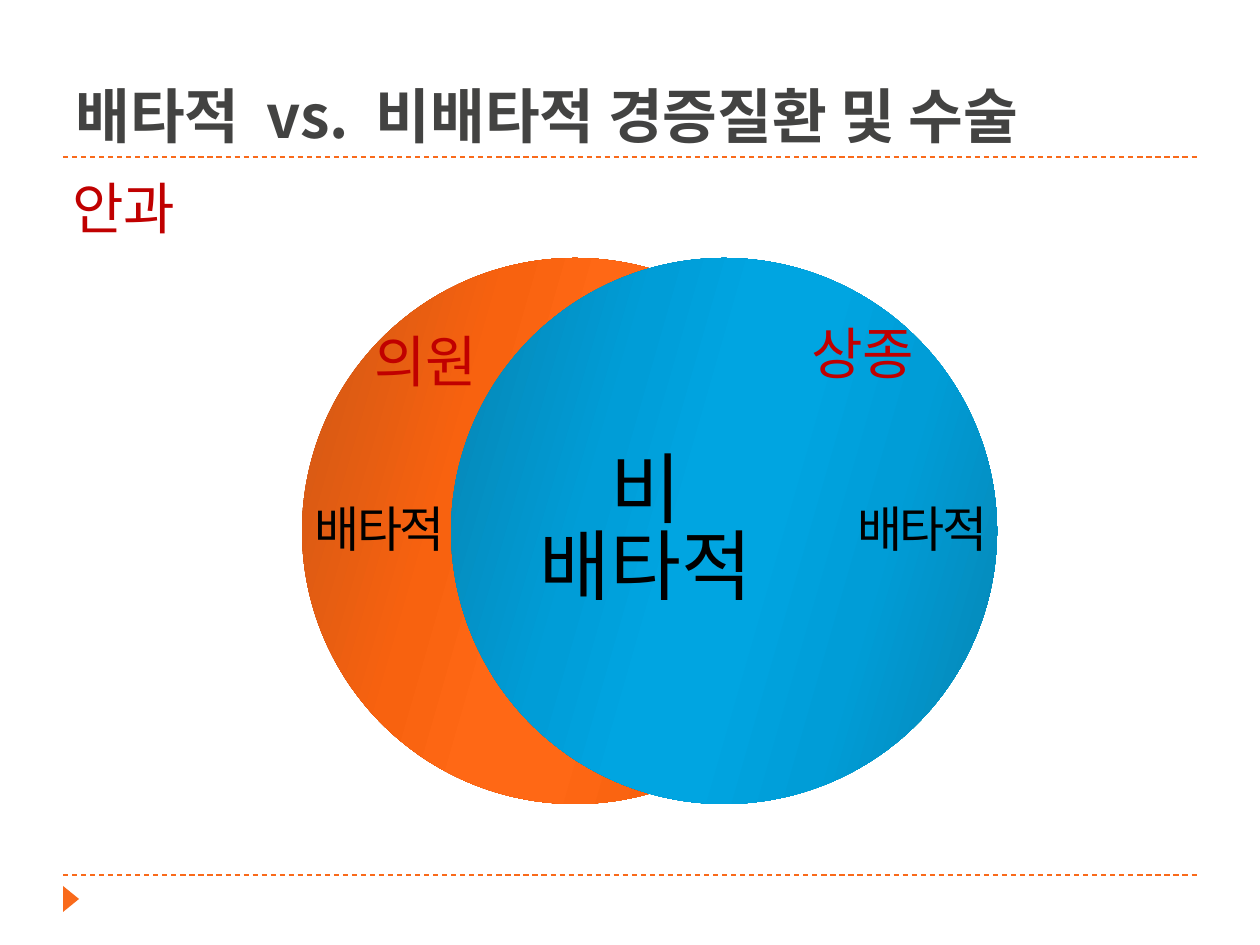
import copy

import pptx
import pptx.dml.color
import pptx.enum.dml
import pptx.enum.shapes
import pptx.enum.text
import pptx.oxml.ns
import pptx.util
from lxml import etree

EMU_PER_PX = 914400 / 126
KOREAN = "Noto Sans CJK KR"
COLORS = {
    "accent": "F96A1B",
    "title": "434342",
    "heading": "C00000",
    "label": "000000",
}
GRADIENT_POSITIONS = [0, 0.30, 0.45, 0.55, 0.73, 1]
ALIGN = pptx.enum.text.PP_ALIGN
ANCHOR = pptx.enum.text.MSO_ANCHOR
SHAPES = pptx.enum.shapes.MSO_SHAPE
rgb = pptx.dml.color.RGBColor.from_string


def emu(*lengths):
    return [pptx.util.Emu(round(px * EMU_PER_PX)) for px in lengths]


def add_text(shapes, box, lines, size, color, font=KOREAN, align=ALIGN.LEFT,
             anchor=ANCHOR.TOP, inset=None, line_spacing=0.84, bold=False,
             tracking=0):
    """Add a text box; each line is a list of (text, extra tracking in pt) runs."""
    textbox = shapes.add_textbox(*emu(*box))
    frame = textbox.text_frame
    frame.word_wrap = True
    frame.vertical_anchor = anchor
    if inset is not None:
        frame.margin_left = frame.margin_right = inset
        frame.margin_top = frame.margin_bottom = inset
    paragraph = frame.paragraphs[0]
    paragraph.alignment = align
    paragraph.line_spacing = line_spacing
    for number, line in enumerate(lines):
        if number:
            paragraph.add_line_break()
        for text, extra in line:
            run = paragraph.add_run()
            run.text = text
            run.font.size = pptx.util.Pt(size)
            run.font.bold = bold
            run.font.name = font
            run.font.color.rgb = rgb(COLORS[color])
            properties = run.font._element
            east_asian = etree.SubElement(properties, pptx.oxml.ns.qn("a:ea"))
            east_asian.set("typeface", font)
            if tracking + extra:
                properties.set("spc", str(round((tracking + extra) * 100)))
    return frame


presentation = pptx.Presentation()
presentation.slide_width, presentation.slide_height = emu(1260, 945)
slide = presentation.slides.add_slide(presentation.slide_layouts[6])

# Dashed rules and footer marker
for rule_y in (157, 875):
    rule = slide.shapes.add_connector(
        pptx.enum.shapes.MSO_CONNECTOR.STRAIGHT, *emu(63, rule_y, 1197, rule_y))
    rule.line.color.rgb = rgb(COLORS["accent"])
    rule.line.width = pptx.util.Pt(0.75)
    rule.line.dash_style = pptx.enum.dml.MSO_LINE.DASH
    etree.SubElement(rule._element.spPr, pptx.oxml.ns.qn("a:effectLst"))

marker = slide.shapes.add_shape(SHAPES.ISOSCELES_TRIANGLE, *emu(58, 891, 26, 16))
marker.rotation = 90
marker.shadow.inherit = False
marker.fill.solid()
marker.fill.fore_color.rgb = rgb(COLORS["accent"])
marker.line.fill.background()

# Title, with wider word gaps around "vs."
add_text(slide.shapes, (63, 21, 1134, 136),
         [[("배타적", 0), (" ", 7.6), ("vs.", 0), (" ", 7.6),
           ("비배타적 경증질환 및 수술", 0)]],
         34, "title", anchor=ANCHOR.BOTTOM, line_spacing=1.2, bold=True)

# Overlapping circles, each grouped with its label
circles = [
    (302, (302, 323, 155, 417), ["CC5716", "F8620F", "FF6815"]),
    (451, (848, 323, 149, 417), ["0784B2", "009DD7", "00A5E1"]),
]
for circle_left, label_box, shades in circles:
    group = slide.shapes.add_group_shape()
    circle = group.shapes.add_shape(SHAPES.OVAL, *emu(circle_left, 258, 546, 546))
    circle.shadow.inherit = False
    circle.line.fill.background()
    circle.fill.gradient()
    circle.fill.gradient_angle = 344
    stop_list = circle._element.spPr.find(".//" + pptx.oxml.ns.qn("a:gsLst"))
    for _ in range(len(GRADIENT_POSITIONS) - len(stop_list)):
        stop_list.append(copy.deepcopy(stop_list[0]))
    mirrored_shades = shades + shades[::-1]
    for stop, position, shade in zip(
            circle.fill.gradient_stops, GRADIENT_POSITIONS, mirrored_shades):
        stop.position = position
        stop.color.rgb = rgb(shade)
    add_text(group.shapes, label_box, [[("배타적", 0)]], 28, "label",
             font="Calibri", align=ALIGN.CENTER, anchor=ANCHOR.MIDDLE,
             inset=0, line_spacing=0.9, tracking=-1.5)

# Department, shared area and the two hospital types
add_text(slide.shapes, (331, 449, 630, 199), [[("비", 0)], [("배타적", 0)]],
         44, "label", align=ALIGN.CENTER)
for heading, left, top in (("안과", 60, 178), ("의원", 362, 331), ("상종", 799, 323)):
    add_text(slide.shapes, (left, top, 208, 81), [[(heading, 0)]], 32, "heading")

presentation.save("out.pptx")
